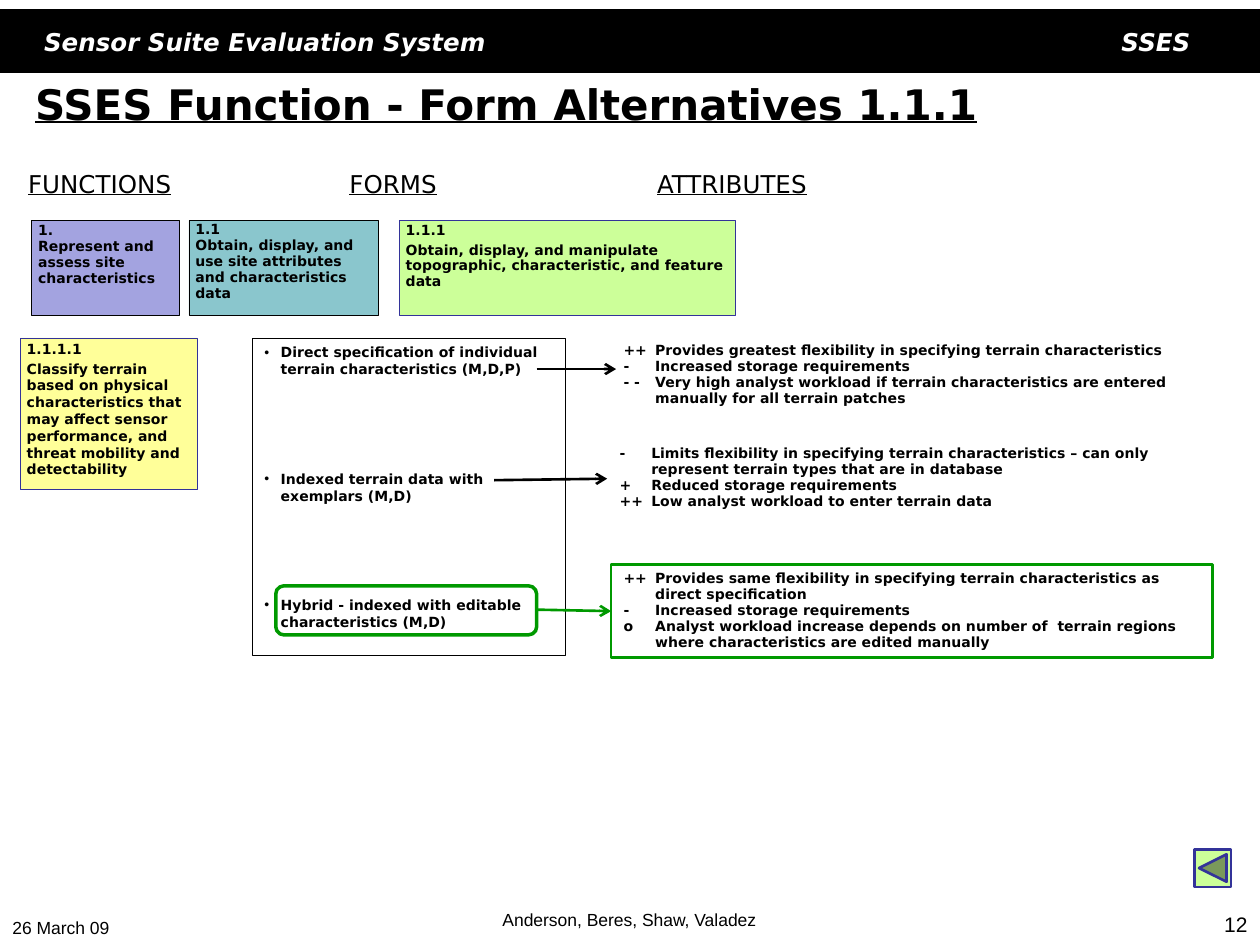
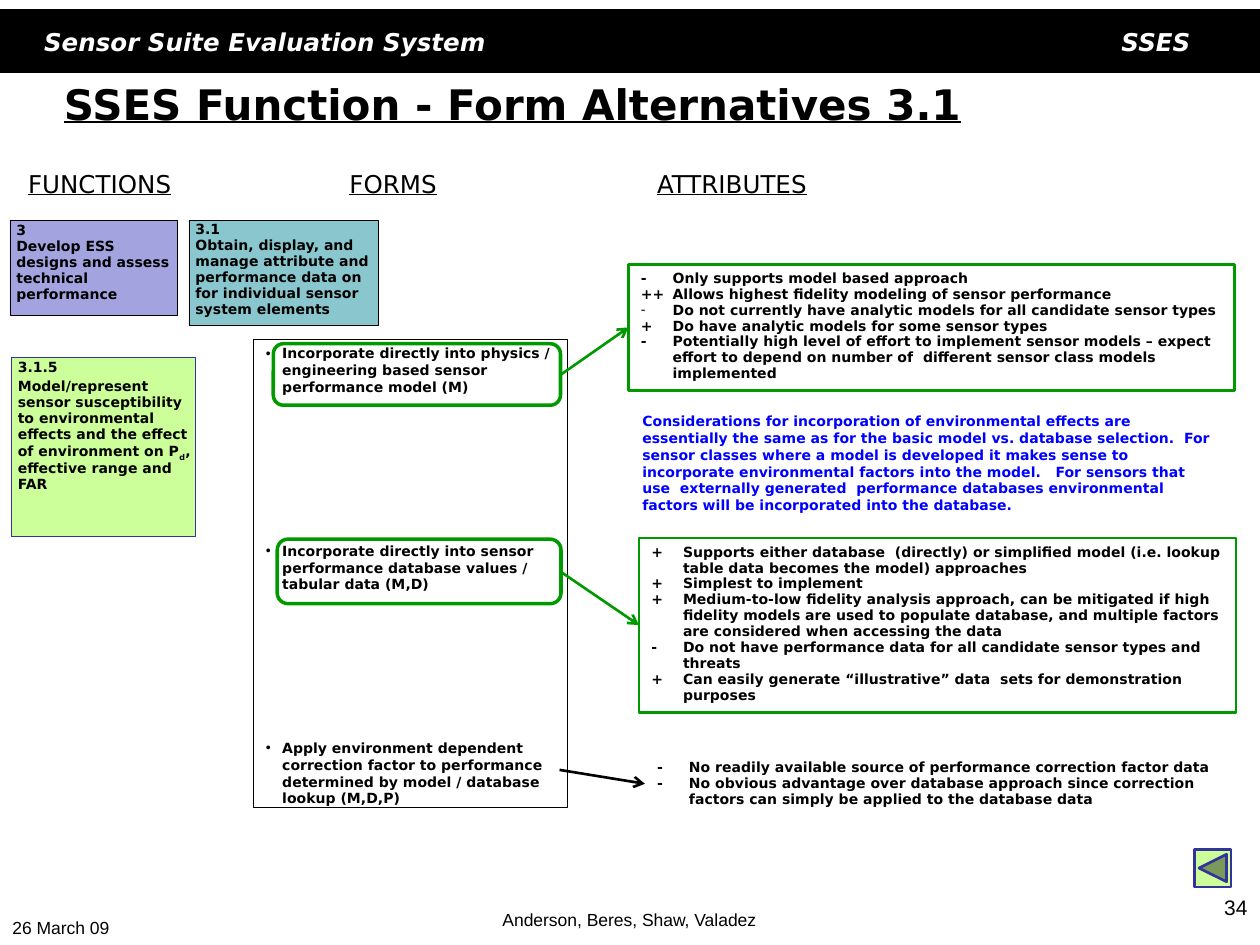
"""Build two function-form alternative slides of the SSES deck."""
from dataclasses import dataclass
from typing import NamedTuple, Optional

import lxml.etree
import pptx
import pptx.dml.color
import pptx.enum.shapes
import pptx.enum.text
import pptx.oxml.ns
import pptx.shapes.autoshape
import pptx.slide
import pptx.text.text
import pptx.util

Cm = pptx.util.Cm
Pt = pptx.util.Pt
SHAPE = pptx.enum.shapes.MSO_SHAPE
ALIGN = pptx.enum.text.PP_ALIGN
ANCHOR = pptx.enum.text.MSO_ANCHOR


@dataclass(frozen=True)
class Theme:
    sans: str = "DejaVu Sans"
    footer_font: str = "Arial"
    black: str = "000000"
    white: str = "FFFFFF"
    navy: str = "333399"
    chosen: str = "009900"
    remark: str = "0000FF"
    lilac: str = "A3A3E0"
    teal: str = "8AC6CD"
    lime: str = "CCFF99"
    yellow: str = "FFFF99"
    title: float = 24
    heading: float = 14
    page: float = 12
    footer: float = 10
    body: float = 8
    hairline: float = 0.25
    rule: float = 1.5
    ring: float = 2
    tight: float = 0.95


THEME = Theme()


class Frame(NamedTuple):
    x: float
    y: float
    w: float
    h: float


class Arrow(NamedTuple):
    x1: float
    y1: float
    x2: float
    y2: float


class Card(NamedTuple):
    frame: Frame
    number: str
    text: str
    fill: str
    line: str = THEME.black
    gap: float = 0
    spacing: float = THEME.tight
    inset: float = 0.05


class Attribute(NamedTuple):
    mark: str
    text: str
    bulleted: bool = False


class Form(NamedTuple):
    text: str
    arrow: Arrow
    frame: Frame
    attributes: list[Attribute]
    ring: Optional[Frame] = None


class Page(NamedTuple):
    title: str
    title_x: float
    number: str
    number_y: float
    cards: list[Card]
    forms_frame: Frame
    form_gap: float
    forms: list[Form]
    remark: str = ""
    remark_frame: Optional[Frame] = None


HEADINGS = {
    "FUNCTIONS": Frame(0.08, 3.28, 3.86, 0.86),
    "FORMS": Frame(5.08, 3.28, 5.69, 0.86),
    "ATTRIBUTES": Frame(11.91, 3.28, 5.69, 0.86),
}

PAGES = [
    Page(
        "SSES Function - Form Alternatives 1.1.1", 0.46, "12", 18.26,
        [
            Card(Frame(0.64, 4.45, 2.97, 1.9), "1.",
                 "Represent and assess site characteristics", THEME.lilac),
            Card(Frame(3.81, 4.45, 3.81, 1.9), "1.1",
                 "Obtain, display, and use site attributes and characteristics data",
                 THEME.teal, inset=0.03),
            Card(Frame(8.05, 4.45, 6.78, 1.9), "1.1.1",
                 "Obtain, display, and manipulate topographic, characteristic, and feature data",
                 THEME.lime, THEME.navy, gap=1.8),
            Card(Frame(0.41, 6.81, 3.56, 3.05), "1.1.1.1",
                 "Classify terrain based on physical characteristics that may affect sensor "
                 "performance, and threat mobility and detectability",
                 THEME.yellow, THEME.navy, gap=1.8, spacing=1.0),
        ],
        Frame(5.08, 6.81, 6.32, 6.4), 53,
        [
            Form("Direct specification of individual terrain characteristics (M,D,P)",
                 Arrow(10.82, 7.44, 12.42, 7.44), Frame(12.32, 6.78, 12.12, 1.55), [
                     Attribute("++", "Provides greatest flexibility in specifying terrain characteristics"),
                     Attribute("-", "Increased storage requirements"),
                     Attribute("- -", "Very high analyst workload if terrain characteristics are "
                               "entered manually for all terrain patches"),
                 ]),
            Form("Indexed terrain data with exemplars (M,D)",
                 Arrow(9.96, 9.68, 12.24, 9.65), Frame(12.24, 8.86, 12.12, 1.55), [
                     Attribute("-", "Limits flexibility in specifying terrain characteristics – can "
                               "only represent terrain types that are in database"),
                     Attribute("+", "Reduced storage requirements"),
                     Attribute("++", "Low analyst workload to enter terrain data"),
                 ]),
            Form("Hybrid - indexed with editable characteristics (M,D)",
                 Arrow(10.82, 12.29, 12.32, 12.32), Frame(12.32, 11.38, 12.12, 1.88), [
                     Attribute("++", "Provides same flexibility in specifying terrain "
                               "characteristics as direct specification"),
                     Attribute("-", "Increased storage requirements"),
                     Attribute("o", "Analyst workload increase depends on number of  terrain "
                               "regions where characteristics are edited manually"),
                 ], Frame(5.56, 11.81, 5.26, 0.99)),
        ],
    ),
    Page(
        "SSES Function - Form Alternatives 3.1", 1.04, "34", 17.91,
        [
            Card(Frame(0.2, 4.45, 3.38, 1.9), "3",
                 "Develop ESS designs and assess technical performance", THEME.lilac),
            Card(Frame(3.81, 4.45, 3.81, 2.11), "3.1",
                 "Obtain, display, and manage attribute and performance data on for "
                 "individual sensor system elements", THEME.teal, inset=0.03),
            Card(Frame(0.23, 7.21, 3.71, 3.61), "3.1.5",
                 "Model/represent sensor susceptibility to environmental effects and the "
                 "effect of environment on P~d~, effective range and FAR",
                 THEME.lime, THEME.navy, gap=1.8),
        ],
        Frame(5.11, 6.83, 6.32, 9.45), 84,
        [
            Form("Incorporate directly into physics / engineering based sensor performance model (M)",
                 Arrow(11.28, 7.57, 12.67, 6.6), Frame(12.67, 5.33, 12.22, 2.54), [
                     Attribute("-", "Only supports model based approach"),
                     Attribute("++", "Allows highest fidelity modeling of sensor performance"),
                     Attribute("-", "Do not currently have analytic models for all candidate "
                               "sensor types", bulleted=True),
                     Attribute("+", "Do have analytic models for some sensor types"),
                     Attribute("-", "Potentially high level of effort to implement sensor models – "
                               "expect effort to depend on number of  different sensor class "
                               "models implemented"),
                 ], Frame(5.51, 6.93, 5.79, 1.24)),
            Form("Incorporate directly into sensor performance database values / tabular data (M,D)",
                 Arrow(11.28, 11.51, 12.88, 12.6), Frame(12.88, 10.85, 12.04, 3.51), [
                     Attribute("+", "Supports either database  (directly) or simplified model (i.e. "
                               "lookup table data becomes the model) approaches"),
                     Attribute("+", "Simplest to implement"),
                     Attribute("+", "Medium-to-low fidelity analysis approach, can be mitigated if "
                               "high fidelity models are used to populate database, and multiple "
                               "factors are considered when accessing the data"),
                     Attribute("-", "Do not have performance data for all candidate sensor types "
                               "and threats"),
                     Attribute("+", "Can easily generate “illustrative” data  sets for "
                               "demonstration purposes"),
                 ], Frame(5.59, 10.87, 5.72, 1.3)),
            Form("Apply environment dependent correction factor to performance determined by "
                 "model / database lookup (M,D,P)",
                 Arrow(11.28, 15.52, 13, 15.8), Frame(13, 15.19, 11.81, 1.22), [
                     Attribute("-", "No readily available source of performance correction factor data"),
                     Attribute("-", "No obvious advantage over database approach since correction "
                               "factors can simply be applied to the database data"),
                 ]),
        ],
        "Considerations for incorporation of environmental effects are essentially the same as "
        "for the basic model vs. database selection.  For sensor classes where a model is "
        "developed it makes sense to incorporate environmental factors into the model.   For "
        "sensors that use  externally generated  performance databases environmental factors "
        "will be incorporated into the database.",
        Frame(12.7, 8.2, 12.09, 2.31),
    ),
]


def rgb(color: str) -> pptx.dml.color.RGBColor:
    return pptx.dml.color.RGBColor.from_string(color)


def add_xml(parent: lxml.etree.ElementBase, tag: str, **attrs: str) -> lxml.etree.ElementBase:
    return lxml.etree.SubElement(parent, pptx.oxml.ns.qn(tag), attrs)


def write(tf: pptx.text.text.TextFrame, text: str, *, size: float = THEME.body,
          font: str = THEME.sans, color: str = THEME.black, bold: bool = False,
          italic: bool = False, underline: bool = False, align: ALIGN = ALIGN.LEFT,
          spacing: float = 1.0, before: float = 0, indent: float = 0,
          bullet: str = "", right_tab: float = 0) -> None:
    p = tf.paragraphs[0]
    if p.runs:
        p = tf.add_paragraph()
    p.alignment, p.line_spacing, p.space_before = align, spacing, Pt(before)
    pPr = p._p.get_or_add_pPr()
    if indent:
        pPr.set("marL", str(Cm(indent)))
        pPr.set("indent", str(-Cm(indent)))
    if bullet:
        add_xml(pPr, "a:buFont", typeface=THEME.footer_font)
        add_xml(pPr, "a:buChar", char=bullet)
    if right_tab:
        add_xml(add_xml(pPr, "a:tabLst"), "a:tab", pos=str(Cm(right_tab)), algn="r")
    for i, part in enumerate(text.split("~")):
        r = p.add_run()
        r.text = part
        r.font.size, r.font.name, r.font.color.rgb = Pt(size), font, rgb(color)
        r.font.bold, r.font.italic, r.font.underline = bold, italic, underline
        if i % 2:
            r._r.get_or_add_rPr().set("baseline", "-25000")


def add_box(s: pptx.slide.Slide, frame: Frame, *, kind: SHAPE = SHAPE.RECTANGLE,
            fill: str = "", line: str = THEME.black,
            width: float = THEME.hairline) -> pptx.shapes.autoshape.Shape:
    sp = s.shapes.add_shape(kind, *map(Cm, frame))
    sp.shadow.inherit = False
    if fill:
        sp.fill.solid()
        sp.fill.fore_color.rgb = rgb(fill)
    else:
        sp.fill.background()
    sp.line.color.rgb, sp.line.width = rgb(line), Pt(width)
    sp.text_frame.word_wrap = True
    sp.text_frame.vertical_anchor = ANCHOR.TOP
    return sp


def add_text(s: pptx.slide.Slide, frame: Frame,
             anchor: ANCHOR = ANCHOR.TOP) -> pptx.text.text.TextFrame:
    tf = s.shapes.add_textbox(*map(Cm, frame)).text_frame
    tf.word_wrap, tf.vertical_anchor = True, anchor
    return tf


def add_arrow(s: pptx.slide.Slide, arrow: Arrow, color: str) -> None:
    cn = s.shapes.add_connector(pptx.enum.shapes.MSO_CONNECTOR.STRAIGHT, *map(Cm, arrow))
    cn.line.color.rgb, cn.line.width = rgb(color), Pt(THEME.rule)
    add_xml(cn.line._get_or_add_ln(), "a:tailEnd", type="arrow")
    add_xml(cn._element.spPr, "a:effectLst")


def add_common(s: pptx.slide.Slide, page: Page) -> None:
    add_box(s, Frame(0, 0.2, 25.4, 1.27), fill=THEME.black, width=0.75)
    tf = add_text(s, Frame(0, 0.43, 25.4, 0.84))
    tf.margin_left = Cm(0.89)
    write(tf, "Sensor Suite Evaluation System\tSSES", size=THEME.heading, color=THEME.white,
          bold=True, italic=True, right_tab=23.11)
    write(add_text(s, Frame(page.title_x, 1.24, 22.86, 1.7), ANCHOR.MIDDLE), page.title,
          size=THEME.title, bold=True, underline=True)
    for heading, frame in HEADINGS.items():
        write(add_text(s, frame), heading, size=THEME.heading, underline=True, align=ALIGN.CENTER)
    write(add_text(s, Frame(0, 18.36, 3.99, 0.69)), "26 March 09",
          size=THEME.footer, font=THEME.footer_font)
    write(add_text(s, Frame(8, 17.98, 9.37, 0.89), ANCHOR.BOTTOM),
          "Anderson, Beres, Shaw, Valadez", size=THEME.footer, font=THEME.footer_font,
          align=ALIGN.CENTER)
    write(add_text(s, Frame(19.48, page.number_y, 5.92, 19.05 - page.number_y)), page.number,
          size=THEME.page, font=THEME.footer_font, align=ALIGN.RIGHT)
    add_box(s, Frame(24.08, 17.12, 0.74, 0.76), kind=SHAPE.ACTION_BUTTON_BACK_OR_PREVIOUS,
            fill=THEME.lime, line=THEME.navy, width=THEME.rule)


def add_card(s: pptx.slide.Slide, card: Card) -> None:
    tf = add_box(s, card.frame, fill=card.fill, line=card.line).text_frame
    tf.margin_left = Cm(0.13)
    tf.margin_top = tf.margin_right = tf.margin_bottom = Cm(card.inset)
    write(tf, card.number, bold=True, spacing=card.spacing)
    write(tf, card.text, bold=True, spacing=card.spacing, before=card.gap)


def add_forms(s: pptx.slide.Slide, page: Page) -> None:
    forms_tf = add_box(s, page.forms_frame).text_frame
    for i, form in enumerate(page.forms):
        write(forms_tf, form.text, bold=True, indent=0.33, bullet="•",
              before=page.form_gap if i else 0)
        if form.ring:
            add_box(s, form.ring, kind=SHAPE.ROUNDED_RECTANGLE, line=THEME.chosen, width=THEME.ring)
            tf = add_box(s, form.frame, line=THEME.chosen, width=THEME.rule).text_frame
        else:
            tf = add_text(s, form.frame)
        for a in form.attributes:
            write(tf, a.text if a.bulleted else f"{a.mark}\t{a.text}", bold=True, indent=0.64,
                  spacing=THEME.tight, bullet=a.mark if a.bulleted else "")
        add_arrow(s, form.arrow, THEME.chosen if form.ring else THEME.black)


def main() -> None:
    prs = pptx.Presentation()
    prs.slide_width, prs.slide_height = Cm(25.4), Cm(19.05)
    for page in PAGES:
        s = prs.slides.add_slide(prs.slide_layouts[6])
        add_common(s, page)
        for card in page.cards:
            add_card(s, card)
        add_forms(s, page)
        if page.remark_frame:
            write(add_text(s, page.remark_frame), page.remark, color=THEME.remark, bold=True)
    prs.save("out.pptx")


if __name__ == "__main__":
    main()
